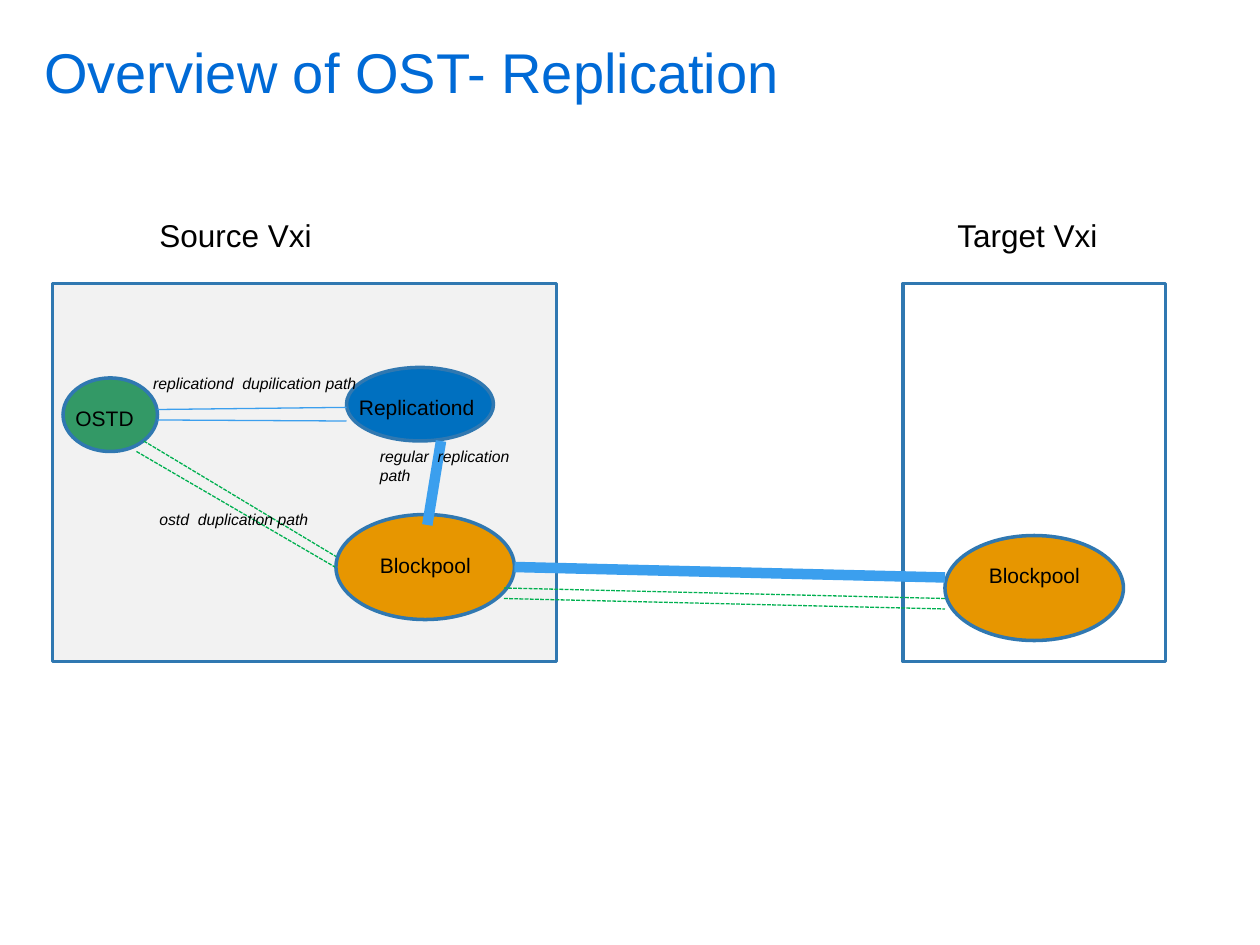
from pptx import Presentation
from pptx.dml.color import RGBColor
from pptx.enum.dml import MSO_LINE
from pptx.enum.shapes import MSO_CONNECTOR, MSO_SHAPE
from pptx.enum.text import MSO_ANCHOR, PP_ALIGN
from pptx.oxml.ns import qn
from pptx.util import Pt
from lxml.etree import SubElement

PX = 7620  # EMU per px, 120 px to the inch
FONT = "Arial"
COLORS = {
    "title": "006AD6",
    "text": "000000",
    "outline": "3078B1",
    "source": "F2F2F2",
    "target": "FFFFFF",
    "blockpool": "E79600",
    "ostd": "339966",
    "replicationd": "0070C0",
    "replication_path": "3B9FEE",
    "ostd_path": "00B050",
}


def color(name):
    return RGBColor.from_string(COLORS[name])


def scaled(lengths):
    return [length * PX for length in lengths]


def set_text(text_frame, text, size, color_name="text", italic=False):
    text_frame.word_wrap = True
    text_frame.text = text
    paragraph = text_frame.paragraphs[0]
    paragraph.alignment = PP_ALIGN.LEFT
    paragraph.font.name = FONT
    paragraph.font.size = Pt(size)
    paragraph.font.italic = italic
    paragraph.font.color.rgb = color(color_name)


def add_title(slide, text, box):
    title = slide.shapes.title
    title.left, title.top, title.width, title.height = scaled(box)
    title.text_frame.vertical_anchor = MSO_ANCHOR.MIDDLE
    set_text(title.text_frame, text, 32, "title")


def add_outlined(slide, kind, box, fill):
    shape = slide.shapes.add_shape(kind, *scaled(box))
    shape.shadow.inherit = False
    shape.fill.solid()
    shape.fill.fore_color.rgb = color(fill)
    shape.line.color.rgb = color("outline")
    shape.line.width = Pt(2)


def add_label(slide, text, box, size, italic=False):
    label = slide.shapes.add_textbox(*scaled(box))
    set_text(label.text_frame, text, size, italic=italic)


def add_path(slide, ends, color_name, width=0.75, dash=None):
    connector = slide.shapes.add_connector(MSO_CONNECTOR.STRAIGHT, *scaled(ends))
    connector.line.color.rgb = color(color_name)
    connector.line.width = Pt(width)
    if dash:
        connector.line.dash_style = dash
    SubElement(connector._element.spPr, qn("a:effectLst"))


def main():
    presentation = Presentation()
    presentation.slide_width, presentation.slide_height = scaled((1200, 900))
    slide = presentation.slides.add_slide(presentation.slide_layouts[5])
    add_title(slide, "Overview of OST- Replication", (30, 26, 1140, 84))

    # The two systems
    add_outlined(slide, MSO_SHAPE.RECTANGLE, (50, 270, 480, 360), "source")
    add_outlined(slide, MSO_SHAPE.RECTANGLE, (860, 270, 250, 360), "target")
    add_label(slide, "Source Vxi", (140, 200, 190, 48), 18)
    add_label(slide, "Target Vxi", (900, 200, 160, 48), 18)

    # Processes and block pools
    for box, fill in (
        ((320, 490, 170, 100), "blockpool"),
        ((900, 510, 170, 100), "blockpool"),
        ((60, 360, 90, 70), "ostd"),
        ((330, 350, 140, 70), "replicationd"),
    ):
        add_outlined(slide, MSO_SHAPE.OVAL, box, fill)

    # Regular replication: thick lines
    for ends in ((420, 420, 407, 500), (490, 540, 900, 550)):
        add_path(slide, ends, "replication_path", width=6)

    # OSTD duplication: dashed pairs
    for ends in (
        (137, 420, 320, 530),
        (130, 430, 319, 540),
        (900, 570, 480, 560),
        (480, 570, 900, 580),
    ):
        add_path(slide, ends, "ostd_path", dash=MSO_LINE.SQUARE_DOT)

    # Replicationd duplication: thin pair
    for ends in ((150, 390, 330, 388), (150, 400, 330, 401)):
        add_path(slide, ends, "replication_path")

    # Names of processes and block pools
    for text, box in (
        ("OSTD", (60, 380, 80, 36)),
        ("Replicationd", (330, 370, 140, 36)),
        ("Blockpool", (350, 520, 120, 36)),
        ("Blockpool", (930, 530, 120, 36)),
    ):
        add_label(slide, text, box, 12)

    # Names of paths
    for text, box in (
        ("regular  replication path", (350, 420, 170, 48)),
        ("ostd  duplication path", (140, 480, 170, 30)),
        ("replicationd  dupilication path", (134, 350, 260, 30)),
    ):
        add_label(slide, text, box, 9, italic=True)

    presentation.save("out.pptx")


if __name__ == "__main__":
    main()
